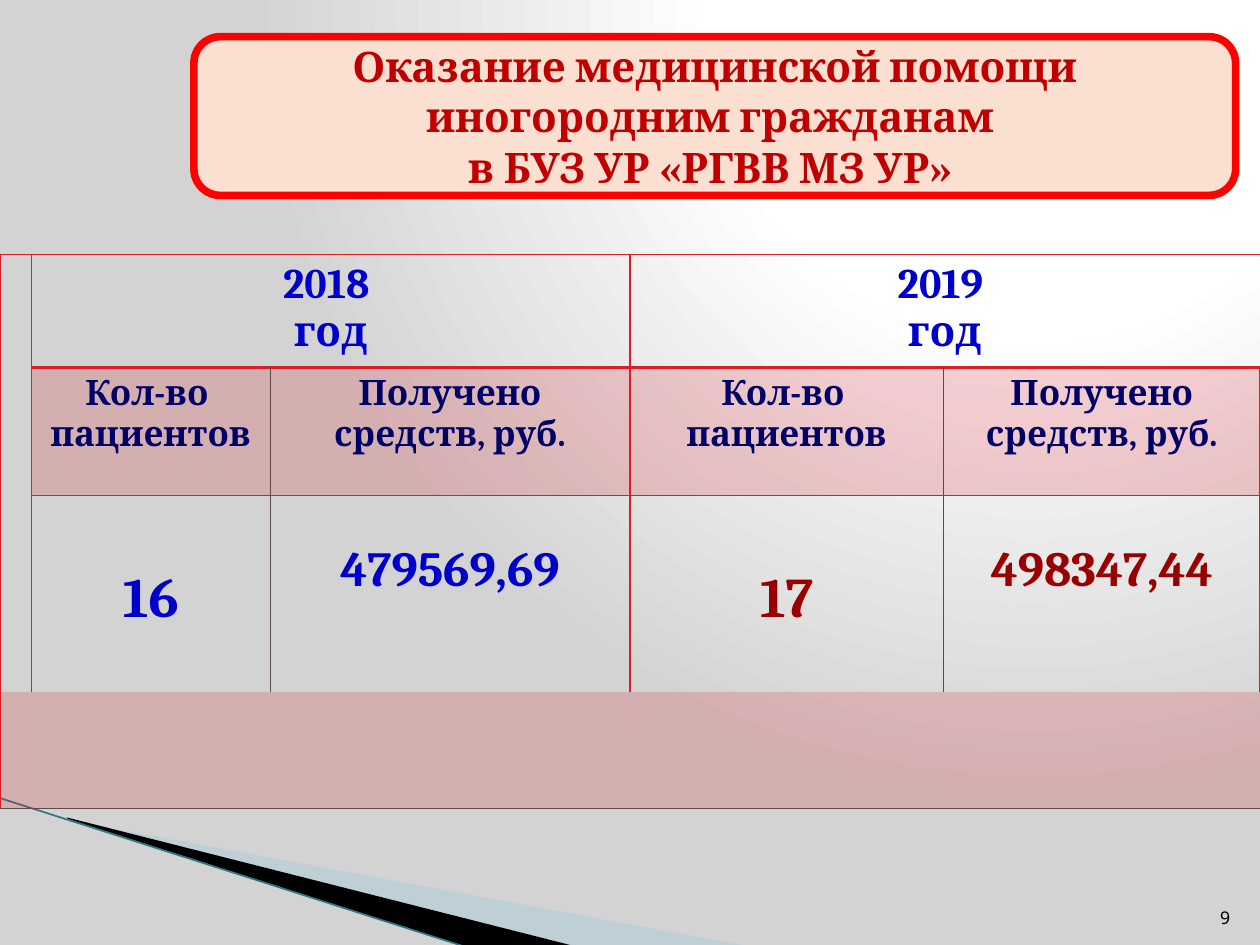
from lxml import etree
from pptx import Presentation
from pptx.dml.color import RGBColor
from pptx.enum.shapes import MSO_CONNECTOR, MSO_SHAPE
from pptx.enum.text import MSO_ANCHOR, PP_ALIGN
from pptx.oxml import parse_xml
from pptx.oxml.ns import nsdecls, qn
from pptx.util import Cm, Pt

STRAIGHT = MSO_CONNECTOR.STRAIGHT
ROUNDED = MSO_SHAPE.ROUNDED_RECTANGLE
BOTTOM, MIDDLE = MSO_ANCHOR.BOTTOM, MSO_ANCHOR.MIDDLE
CENTER, RIGHT = PP_ALIGN.CENTER, PP_ALIGN.RIGHT
NO_STYLE = "{2D5ABB26-0587-4C30-8999-92F81FD0307C}"
COLORS = {
    "white": "FFFFFF", "grey": "D3D3D3", "wedge": "A0CBDC", "black": "000000",
    "teal": "2F7488", "peach": "FBE0D1", "frame": "FF0000", "title": "C00000",
    "red": "DA1F28", "hairline": "5A4A4A", "blue": "0000CC", "navy": "000066",
    "crimson": "990000",
}


def rgb(name):
    """Return a named colour."""
    return RGBColor.from_string(COLORS[name])


def set_alpha(element, percent):
    """Make the solid fill inside an element translucent."""
    color = element.find(f"{qn('a:solidFill')}/{qn('a:srgbClr')}")
    etree.SubElement(color, qn("a:alpha"), val=str(percent * 1000))


def write(frame, lines, size, color, align=CENTER, font="Cambria", bold=True):
    """Fill a text frame with evenly formatted paragraphs."""
    for index, line in enumerate(lines):
        paragraph = frame.add_paragraph() if index else frame.paragraphs[0]
        paragraph.text = line
        paragraph.alignment = align
        paragraph.font.name = font
        paragraph.font.size = Pt(size)
        paragraph.font.bold = bold
        paragraph.font.color.rgb = rgb(color)


def paint_background(slide):
    """Lay a circular white-to-grey gradient on the slide."""
    slide.background.fill.gradient()
    gradient = slide.background._cSld.find(f".//{qn('a:gradFill')}")
    stops = "".join(
        f'<a:gs pos="{position * 1000}"><a:srgbClr val="{COLORS[name]}"/></a:gs>'
        for position, name in ((0, "white"), (40, "white"), (100, "grey")))
    gradient.getparent().replace(gradient, parse_xml(
        f'<a:gradFill {nsdecls("a")} rotWithShape="1"><a:gsLst>{stops}</a:gsLst>'
        '<a:path path="circle"><a:fillToRect l="65000" t="0" r="0" b="98000"/>'
        '</a:path></a:gradFill>'))


def add_corner(slide, left, top):
    """Draw the wedges and the line in the lower left corner."""
    def add_wedge(points, color):
        start, *rest = [(left + Cm(x), top + Cm(y)) for x, y in points]
        builder = slide.shapes.build_freeform(*start)
        builder.add_line_segments(rest, close=True)
        wedge = builder.convert_to_shape()
        wedge.shadow.inherit = False
        wedge.fill.solid()
        wedge.fill.fore_color.rgb = rgb(color)
        wedge.line.fill.background()
        return wedge

    pale = add_wedge([(1.43, 0.46), (15.14, 3), (11.61, 3), (1.43, 0.43)], "wedge")
    set_alpha(pale._element.spPr, 40)
    add_wedge([(1.38, 0.4), (11.64, 3), (9.48, 3.02), (1.4, 0.43)], "black")
    edge = slide.shapes.add_connector(
        STRAIGHT, left, top, left + Cm(9.45), top + Cm(3.02))
    edge.line.color.rgb = rgb("teal")
    edge.line.width = Pt(0.95)
    etree.SubElement(edge._element.spPr, qn("a:effectLst"))


def add_page_number(slide, left, top, side):
    """Place the page number at the bottom right of its box."""
    box = slide.shapes.add_textbox(left, top, side, side)
    box.text_frame.word_wrap = True
    box.text_frame.vertical_anchor = BOTTOM
    write(box.text_frame, ["9"], 10, "black", RIGHT, "Noto Sans Mono", False)


def add_title(slide, left, top, width, height):
    """Draw the framed slide title."""
    title = slide.shapes.add_shape(ROUNDED, left, top, width, height)
    title.shadow.inherit = False
    title.fill.solid()
    title.fill.fore_color.rgb = rgb("peach")
    title.line.color.rgb = rgb("frame")
    title.line.width = Pt(4.33)
    title.text_frame.word_wrap = True
    title.text_frame.vertical_anchor = MIDDLE
    write(title.text_frame, ["Оказание медицинской помощи иногородним гражданам ",
                             "в БУЗ УР «РГВВ МЗ УР» "], 24, "title")


def set_borders(cell, **sides):
    """Set cell borders, each given as a colour name and a width, or None."""
    properties = cell._tc.get_or_add_tcPr()
    for side in "LRTB":
        border = sides.get(side)
        line = etree.SubElement(properties, qn(f"a:ln{side}"))
        if border:
            color, width = border
            line.set("w", str(Pt(width)))
            fill = etree.SubElement(line, qn("a:solidFill"))
            etree.SubElement(fill, qn("a:srgbClr"), val=COLORS[color])
        else:
            line.set("w", "0")
            etree.SubElement(line, qn("a:noFill"))


def style_grid(table):
    """Give every cell its borders and its tint."""
    thin, thick, hairline = ("red", 1), ("red", 2), ("hairline", 0.25)
    verticals = [thin, thin, hairline, thin, hairline, thin]
    horizontals = [thin, thick, thin, None, hairline]
    for row in range(4):
        for column in range(5):
            cell = table.cell(row, column)
            left, right = verticals[column:column + 2]
            above, below = horizontals[row:row + 2]
            if row == 0:
                left = None if left is hairline else left
                right = None if right is hairline else right
            if row == 3:
                left = thin if column == 0 else None
                right = thin if column == 4 else None
            elif column == 0:
                above, below = (thin if row == 0 else None), None
            set_borders(cell, L=left, R=right, T=above, B=below)
            if row == 3 or (row == 1 and column):
                cell.fill.solid()
                cell.fill.fore_color.rgb = rgb("red")
                set_alpha(cell._tc.tcPr, 20)
            else:
                cell.fill.background()


def add_payments_table(slide, left, top, width, height):
    """Build the table of patients and money received by year."""
    frame = slide.shapes.add_table(4, 5, left, top, width, height)
    table = frame.table
    table.first_row = table.horz_banding = False
    table._tbl.tblPr.find(qn("a:tableStyleId")).text = NO_STYLE
    for column, size in zip(table.columns, (0.64, 4.8, 7.26, 6.32, 6.38)):
        column.width = Cm(size)
    for row, size in zip(table.rows, (2.21, 2.57, 3.96, 2.34)):
        row.height = Cm(size)
    frame.height = height
    style_grid(table)

    years = (("2018 ", "16", "479569,69", "blue"),
             ("2019 ", "17", "498347,44", "crimson"))
    for column, (year, patients, money, color) in zip((1, 3), years):
        table.cell(0, column).merge(table.cell(0, column + 1))
        write(table.cell(0, column).text_frame, [year, "год"], 24, "blue")
        write(table.cell(1, column).text_frame, ["Кол-во ", "пациентов"], 20, "navy")
        write(table.cell(1, column + 1).text_frame,
              ["Получено средств, руб."], 20, "navy")
        figures = ((patients, 32, 1.45), (money, 28, 0.95))
        for offset, (figure, size, margin) in enumerate(figures):
            cell = table.cell(2, column + offset)
            cell.margin_top = Cm(margin)
            write(cell.text_frame, [figure], size, color)
    table.cell(0, 0).merge(table.cell(2, 0))
    table.cell(3, 0).merge(table.cell(3, 4))


def main():
    """Build and save the slide."""
    deck = Presentation()
    deck.slide_width, deck.slide_height = Cm(25.4), Cm(19.05)
    slide = deck.slides.add_slide(deck.slide_layouts[6])
    paint_background(slide)
    add_corner(slide, Cm(-0.03), Cm(16.08))
    add_page_number(slide, Cm(24.03), Cm(17.81), Cm(1.02))
    add_title(slide, Cm(3.91), Cm(0.74), Cm(21), Cm(3.2))
    add_payments_table(slide, Cm(0), Cm(5.13), Cm(25.4), Cm(11.73))
    deck.save("out.pptx")


if __name__ == "__main__":
    main()
